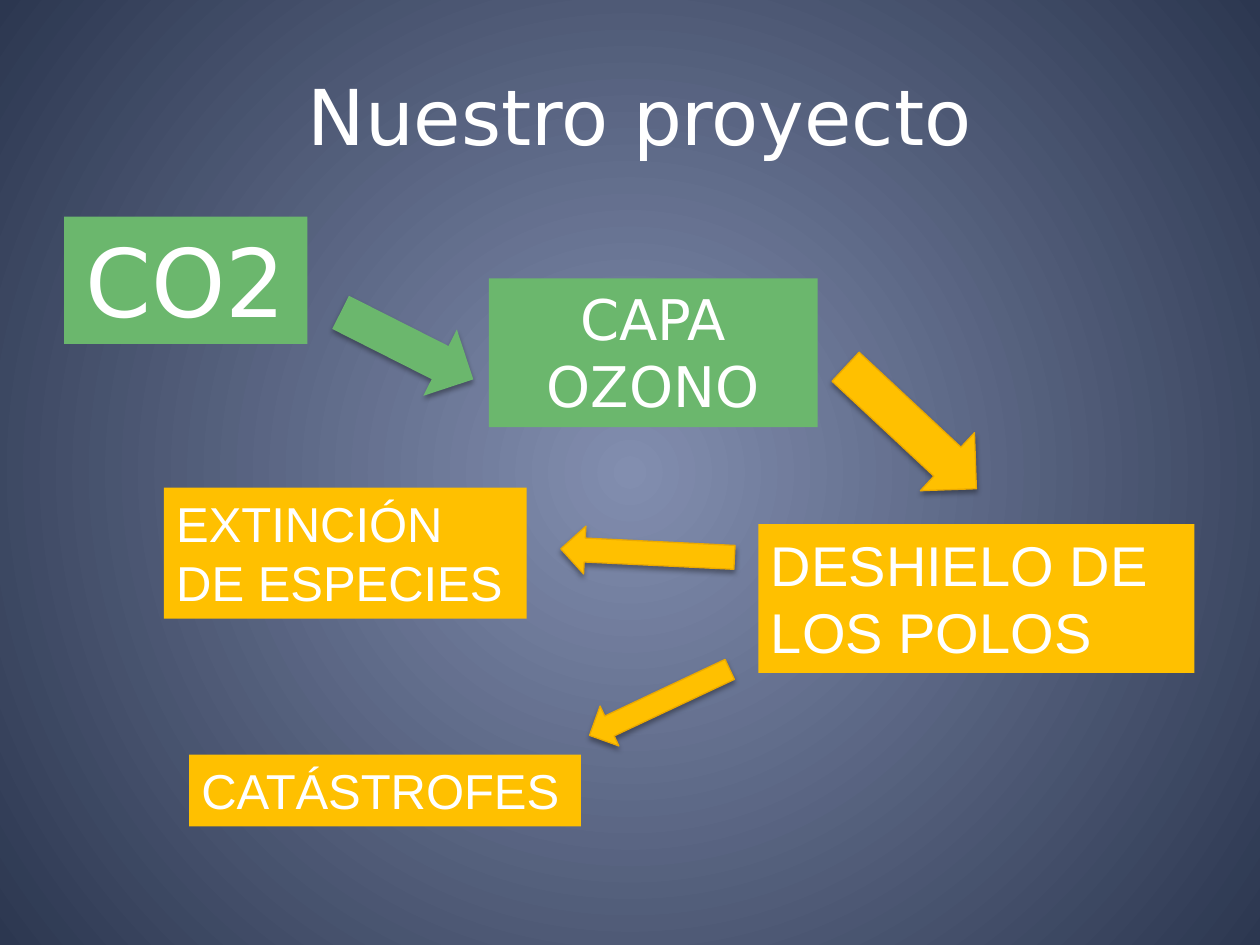
from lxml import etree
from pptx import Presentation
from pptx.dml.color import RGBColor
from pptx.enum.shapes import MSO_SHAPE
from pptx.enum.text import MSO_ANCHOR, MSO_AUTO_SIZE, PP_ALIGN
from pptx.oxml import parse_xml
from pptx.util import Inches, Pt

RIGHT, DOWN = MSO_SHAPE.RIGHT_ARROW, MSO_SHAPE.DOWN_ARROW
LEFT, CENTER = PP_ALIGN.LEFT, PP_ALIGN.CENTER
NS = "http://schemas.openxmlformats.org/drawingml/2006/main"
THEME = {
    "inner": "828EAF", "outer": "2C3750",
    "green": "6BB76D", "gold": "FFC000", "edge": "EBA900", "text": "FFFFFF",
    "wide": "DejaVu Sans", "plain": "Arial",
    "title": 44, "huge": 54, "large": 32, "small": 28,
}

deck = Presentation()
deck.slide_width, deck.slide_height = Inches(10), Inches(7.5)
CELL = deck.slide_width / 100  # the slide is a grid of 100 columns by 75 rows


def grid(*cells):
    return [round(n * CELL) for n in cells]


def write(shape, text, font, size, align):
    frame = shape.text_frame
    frame.text = text
    frame.word_wrap = True
    line = frame.paragraphs[0]
    line.alignment = align
    face = line.runs[0].font
    face.name, face.size = THEME[font], Pt(THEME[size])
    face.color.rgb = RGBColor.from_string(THEME["text"])


slide = deck.slides.add_slide(deck.slide_layouts[5])

# Radial background
fill = slide.background.fill
fill.gradient()
for stop, name in zip(fill.gradient_stops, ("inner", "outer")):
    stop.color.rgb = RGBColor.from_string(THEME[name])
lin = slide.background._cSld.find(f".//{{{NS}}}lin")
lin.getparent().replace(lin, parse_xml(
    f'<a:path xmlns:a="{NS}" path="circle">'
    '<a:fillToRect l="50000" t="50000" r="50000" b="50000"/></a:path>'))

title = slide.shapes.title
title.left, title.top, title.width, title.height = grid(8.3, 4.4, 85, 9.4)
write(title, "Nuestro proyecto", "wide", "title", CENTER)
title.text_frame.vertical_anchor = MSO_ANCHOR.MIDDLE

# Causes in green, effects in gold
boxes = [
    ("CO2", (5.1, 17.2, 19.3, 10.1), "green", "wide", "huge", CENTER),
    ("CAPA OZONO", (38.8, 22.1, 26.1, 11.8), "green", "wide", "large", CENTER),
    ("DESHIELO DE LOS POLOS", (60.2, 41.6, 34.6, 11.8), "gold", "plain", "large", LEFT),
    ("CATÁSTROFES", (15, 59.9, 31.1, 5.7), "gold", "plain", "small", LEFT),
    ("EXTINCIÓN DE ESPECIES", (13, 38.7, 28.8, 10.4), "gold", "plain", "small", LEFT),
]
for text, place, color, font, size, align in boxes:
    box = slide.shapes.add_textbox(*grid(*place))
    box.fill.solid()
    box.fill.fore_color.rgb = RGBColor.from_string(THEME[color])
    write(box, text, font, size, align)
    box.text_frame.auto_size = MSO_AUTO_SIZE.SHAPE_TO_FIT_TEXT

# Arrows with a soft shadow below
arrows = [
    (RIGHT, (26.4, 24.5, 11.8, 5.9), 26.8, "green"),
    (RIGHT, (65.2, 30.8, 14.2, 6.3), 43, "gold"),
    (DOWN, (49.5, 37, 3.8, 13.8), 92.8, "gold"),
    (DOWN, (50.6, 49.6, 3.5, 12.3), 64.8, "gold"),
]
for kind, place, turn, color in arrows:
    arrow = slide.shapes.add_shape(kind, *grid(*place))
    arrow.rotation = turn
    arrow.fill.solid()
    arrow.fill.fore_color.rgb = RGBColor.from_string(THEME[color])
    if color == "gold":
        arrow.line.color.rgb = RGBColor.from_string(THEME["edge"])
        arrow.line.width = Pt(0.75)
    else:
        arrow.line.fill.background()
    arrow.shadow.inherit = False
    effects = arrow._element.spPr.find(f"{{{NS}}}effectLst")
    shade = etree.SubElement(
        effects, f"{{{NS}}}outerShdw", blurRad=str(Pt(3.1)), dist=str(Pt(1.8)),
        dir="5400000", rotWithShape="0")
    black = etree.SubElement(shade, f"{{{NS}}}srgbClr", val="000000")
    etree.SubElement(black, f"{{{NS}}}alpha", val="35000")

deck.save("out.pptx")
